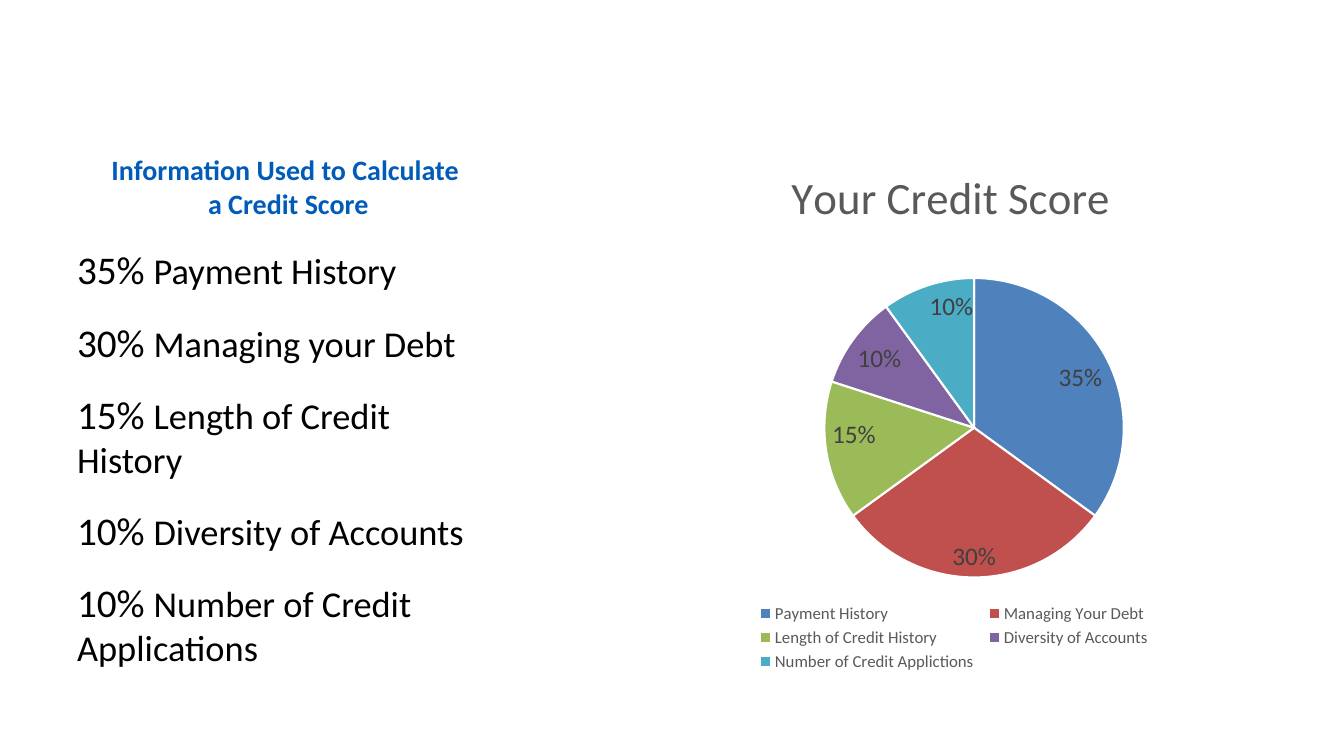
from lxml import etree
from pptx import Presentation
from pptx.chart import data
from pptx.dml.color import RGBColor
from pptx.enum import chart as chart_enum, text
from pptx.oxml import ns
from pptx.util import Pt

HEADING = "Information Used to Calculate \va Credit Score"
FACTORS = [
    ("35%", "Payment History"),
    ("30%", "Managing your Debt"),
    ("15%", "Length of Credit History"),
    ("10%", "Diversity of Accounts"),
    ("10%", "Number of Credit Applications"),
]
CHART_TITLE = "Your Credit Score"
BLUE = RGBColor(0x00, 0x5C, 0xB8)
BLACK = RGBColor(0, 0, 0)
WHITE = RGBColor(0xFF, 0xFF, 0xFF)
GREY = RGBColor(0x59, 0x59, 0x59)
DARK_GREY = RGBColor(0x40, 0x40, 0x40)
SLICES = [
    ("Payment History", 35, RGBColor(0x4F, 0x81, 0xBD)),
    ("Managing Your Debt", 30, RGBColor(0xC0, 0x50, 0x4D)),
    ("Length of Credit History", 15, RGBColor(0x9B, 0xBB, 0x59)),
    ("Diversity of Accounts", 10, RGBColor(0x80, 0x64, 0xA2)),
    ("Number of Credit Applictions", 10, RGBColor(0x4B, 0xAC, 0xC6)),
]

LEFT, TOP, COLUMN_WIDTH = 48, 93.6, 316
HEADING_BOX = (LEFT, TOP, COLUMN_WIDTH, 67)
FACTORS_BOX = (LEFT, 172, COLUMN_WIDTH, 310)
CHART_BOX = (442, TOP, 470, 389)


def style(font, size, color, bold=False):
    for name, value in {"name": "Calibri", "size": Pt(size), "bold": bold}.items():
        setattr(font, name, value)
    font.color.rgb = color


def add_text_frame(slide, box, anchor):
    frame = slide.shapes.add_textbox(*map(Pt, box)).text_frame
    frame.word_wrap = True
    frame.vertical_anchor = anchor
    return frame


def place(element, index, **fractions):
    """Give a chart part a manual layout, as fractions of the chart area."""
    for old in element.findall(ns.qn("c:layout")):
        element.remove(old)
    layout = etree.Element(ns.qn("c:layout"))
    manual = etree.SubElement(layout, ns.qn("c:manualLayout"))
    settings = {"xMode": "edge", "yMode": "edge", **fractions}
    if element.tag == ns.qn("c:plotArea"):
        settings = {"layoutTarget": "inner", **settings}
    for name, value in settings.items():
        etree.SubElement(manual, ns.qn("c:" + name)).set("val", str(value))
    element.insert(index, layout)


def add_heading(slide):
    paragraph = add_text_frame(slide, HEADING_BOX, text.MSO_ANCHOR.BOTTOM).paragraphs[0]
    paragraph.text = HEADING
    paragraph.alignment = text.PP_ALIGN.CENTER
    style(paragraph.font, 20, BLUE, bold=True)


def add_factors(slide):
    frame = add_text_frame(slide, FACTORS_BOX, text.MSO_ANCHOR.TOP)
    for number, (share, factor) in enumerate(FACTORS):
        paragraph = frame.add_paragraph() if number else frame.paragraphs[0]
        paragraph.space_after = Pt(18)
        for words, size in ((share + " ", 28), (factor, 26)):
            run = paragraph.add_run()
            run.text = words
            style(run.font, size, BLACK)


def add_score_chart(slide):
    names, values, colors = zip(*SLICES)
    chart_data = data.CategoryChartData(number_format='0"%"')
    chart_data.categories = names
    chart_data.add_series(CHART_TITLE, values)
    chart = slide.shapes.add_chart(
        chart_enum.XL_CHART_TYPE.PIE, *map(Pt, CHART_BOX), chart_data).chart
    style(chart.font, 10, BLACK)

    chart.has_title = True
    title = chart.chart_title
    title.text_frame.text = CHART_TITLE
    style(title.text_frame.paragraphs[0].runs[0].font, 32, GREY)
    title.include_in_layout = False
    place(title._element, 1, x=0.25, y=0.05)

    chart.has_legend = True
    legend = chart.legend
    legend.position = chart_enum.XL_LEGEND_POSITION.BOTTOM
    legend.include_in_layout = False
    style(legend.font, 12, GREY)
    place(legend._element, 1, x=0.2, y=0.86, w=0.62, h=0.14)

    plot = chart.plots[0]
    plot.vary_by_categories = True
    place(plot._element.getparent(), 0, x=0.31, y=0.27, w=0.46, h=0.55)
    for number, color in enumerate(colors):
        slice_format = plot.series[0].points[number].format
        slice_format.fill.solid()
        slice_format.fill.fore_color.rgb = color
        slice_format.line.color.rgb = WHITE
        slice_format.line.width = Pt(1.5)

    plot.has_data_labels = True
    labels = plot.data_labels
    for name, value in {
        "show_value": True,
        "show_percentage": False,
        "number_format": '0"%"',
        "number_format_is_linked": False,
        "position": chart_enum.XL_LABEL_POSITION.INSIDE_END,
    }.items():
        setattr(labels, name, value)
    style(labels.font, 18, DARK_GREY)


def main():
    presentation = Presentation()
    presentation.slide_width, presentation.slide_height = Pt(960), Pt(540)
    slide = presentation.slides.add_slide(presentation.slide_layouts[6])
    add_heading(slide)
    add_factors(slide)
    add_score_chart(slide)
    presentation.save("out.pptx")


if __name__ == "__main__":
    main()
